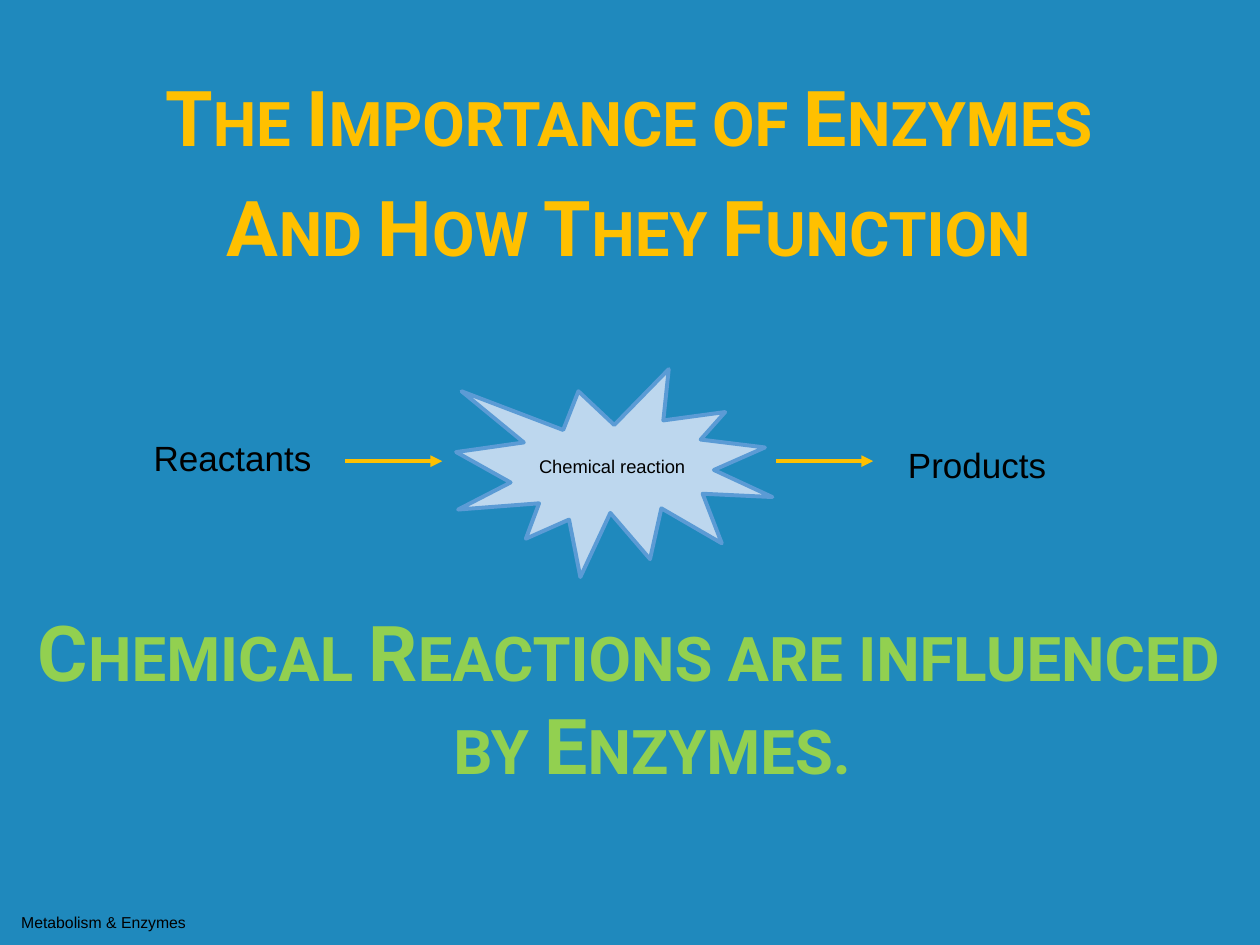
import pptx
import pptx.util
import pptx.dml.color
import pptx.enum.shapes
import pptx.enum.text
import pptx.oxml
import pptx.oxml.ns
import lxml.etree

WIDTH, HEIGHT = 10, 7.5
BACKGROUND, GOLD, GREEN, BLACK = "1F89BD", "FFC000", "92D050", "000000"
BURST_FILL, BURST_LINE = "BDD7EE", "5B9BD5"

# Content
HEADING = ["The Importance of Enzymes", "And How They Function"]
CONCLUSION = ["Chemical Reactions are influenced by Enzymes."]
REACTION = "Chemical reaction"
FOOTER = "Metabolism & Enzymes"
LABELS = [("Reactants", 1.17, 3.44, 3.63, "LEFT"),
          ("Products", 6.93, 3.5, 1.65, "CENTER")]

# Layout
BANNER_LEFT, BANNER_WIDTH, BANNER_HEIGHT = 0.17, 9.64, 1.83
HEADING_TOP, CONCLUSION_TOP = 0.5, 4.75
ARROW_STARTS, ARROW_LENGTH, ARROW_Y = (2.74, 6.16), 0.77, 3.66
LABEL_HEIGHT, LABEL_INSETS = 0.38, (0.05, 0.02)
BURST_BOX = (3.62, 2.93, 2.51, 1.65)
FOOTER_BOX = (0.07, 7.18, 3.38, 0.28)


def color(value):
    return pptx.dml.color.RGBColor.from_string(value)


def inches(*lengths):
    return [pptx.util.Inches(length) for length in lengths]


def write(shape, lines, size, font="Arial", fill=BLACK, align="LEFT",
          anchor="MIDDLE", insets=(0.1, 0.05), banner=False):
    frame = shape.text_frame
    frame.word_wrap = True
    frame.auto_size = pptx.enum.text.MSO_AUTO_SIZE.NONE
    frame.vertical_anchor = getattr(pptx.enum.text.MSO_ANCHOR, anchor)
    frame.margin_left = frame.margin_right = pptx.util.Inches(insets[0])
    frame.margin_top = frame.margin_bottom = pptx.util.Inches(insets[1])
    for index, line in enumerate(lines):
        para = frame.add_paragraph() if index else frame.paragraphs[0]
        para.alignment = getattr(pptx.enum.text.PP_ALIGN, align)
        span = para.add_run()
        span.text = line
        span.font.size = pptx.util.Pt(size)
        span.font.name = font
        span.font.color.rgb = color(fill)
        if banner:  # bold small capitals, hanging indent, no bullet
            para.space_before = pptx.util.Pt(10)
            para.line_spacing = 1.0
            span.font.bold = True
            span.font.element.set("cap", "small") if hasattr(
                span.font, "element") else span._r.get_or_add_rPr().set("cap", "small")
            properties = para._p.get_or_add_pPr()
            indent = pptx.util.Inches(0.37)
            properties.set("marL", str(indent))
            properties.set("indent", str(-indent))
            lxml.etree.SubElement(properties, pptx.oxml.ns.qn("a:buNone"))


def write_banner(shape, lines, fill):
    write(shape, lines, 44, font="Roboto", fill=fill, align="CENTER",
          anchor="TOP", banner=True)


def add_arrow(slide, start):
    arrow = slide.shapes.add_connector(
        pptx.enum.shapes.MSO_CONNECTOR.STRAIGHT,
        *inches(start, ARROW_Y, start + ARROW_LENGTH, ARROW_Y))
    arrow.line.color.rgb = color(GOLD)
    arrow.line.width = pptx.util.Pt(2.25)
    head = lxml.etree.SubElement(arrow.line._get_or_add_ln(),
                                 pptx.oxml.ns.qn("a:tailEnd"))
    head.set("type", "triangle")
    lxml.etree.SubElement(arrow._element.spPr, pptx.oxml.ns.qn("a:effectLst"))


def main():
    deck = pptx.Presentation()
    deck.slide_width, deck.slide_height = inches(WIDTH, HEIGHT)
    page = deck.slides.add_slide(deck.slide_layouts[1])
    page.background.fill.solid()
    page.background.fill.fore_color.rgb = color(BACKGROUND)
    title = page.shapes.title._element
    title.getparent().remove(title)

    # Footer and heading
    write(page.shapes.add_textbox(*inches(*FOOTER_BOX)), [FOOTER], 9)
    heading = page.placeholders[1]
    heading.left, heading.top, heading.width, heading.height = inches(
        BANNER_LEFT, HEADING_TOP, BANNER_WIDTH, BANNER_HEIGHT)
    write_banner(heading, HEADING, GOLD)

    # Reaction: reactants, burst, products
    for text, left, top, width, align in LABELS:
        label = page.shapes.add_textbox(*inches(left, top, width, LABEL_HEIGHT))
        write(label, [text], 20, align=align, insets=LABEL_INSETS)
    for start in ARROW_STARTS:
        add_arrow(page, start)
    burst = page.shapes.add_shape(
        pptx.enum.shapes.MSO_SHAPE.EXPLOSION1, *inches(*BURST_BOX))
    burst.shadow.inherit = False
    burst.fill.solid()
    burst.fill.fore_color.rgb = color(BURST_FILL)
    burst.line.color.rgb = color(BURST_LINE)
    burst.line.width = pptx.util.Pt(2.25)
    write(burst, [REACTION], 10.5, align="CENTER", insets=(0, 0))

    # Conclusion
    conclusion = page.shapes.add_textbox(*inches(
        BANNER_LEFT, CONCLUSION_TOP, BANNER_WIDTH, BANNER_HEIGHT))
    write_banner(conclusion, CONCLUSION, GREEN)

    deck.save("out.pptx")


if __name__ == "__main__":
    main()
